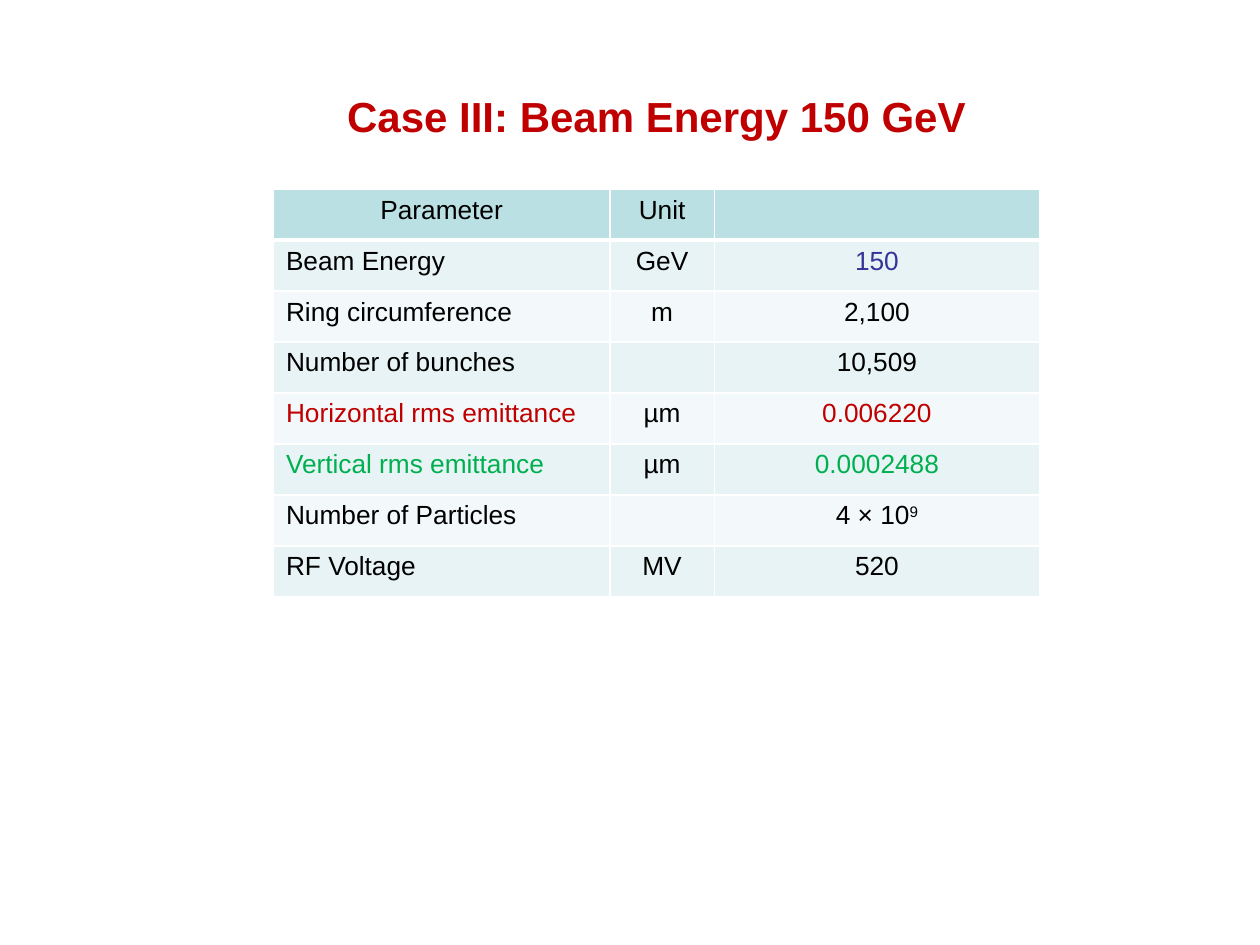
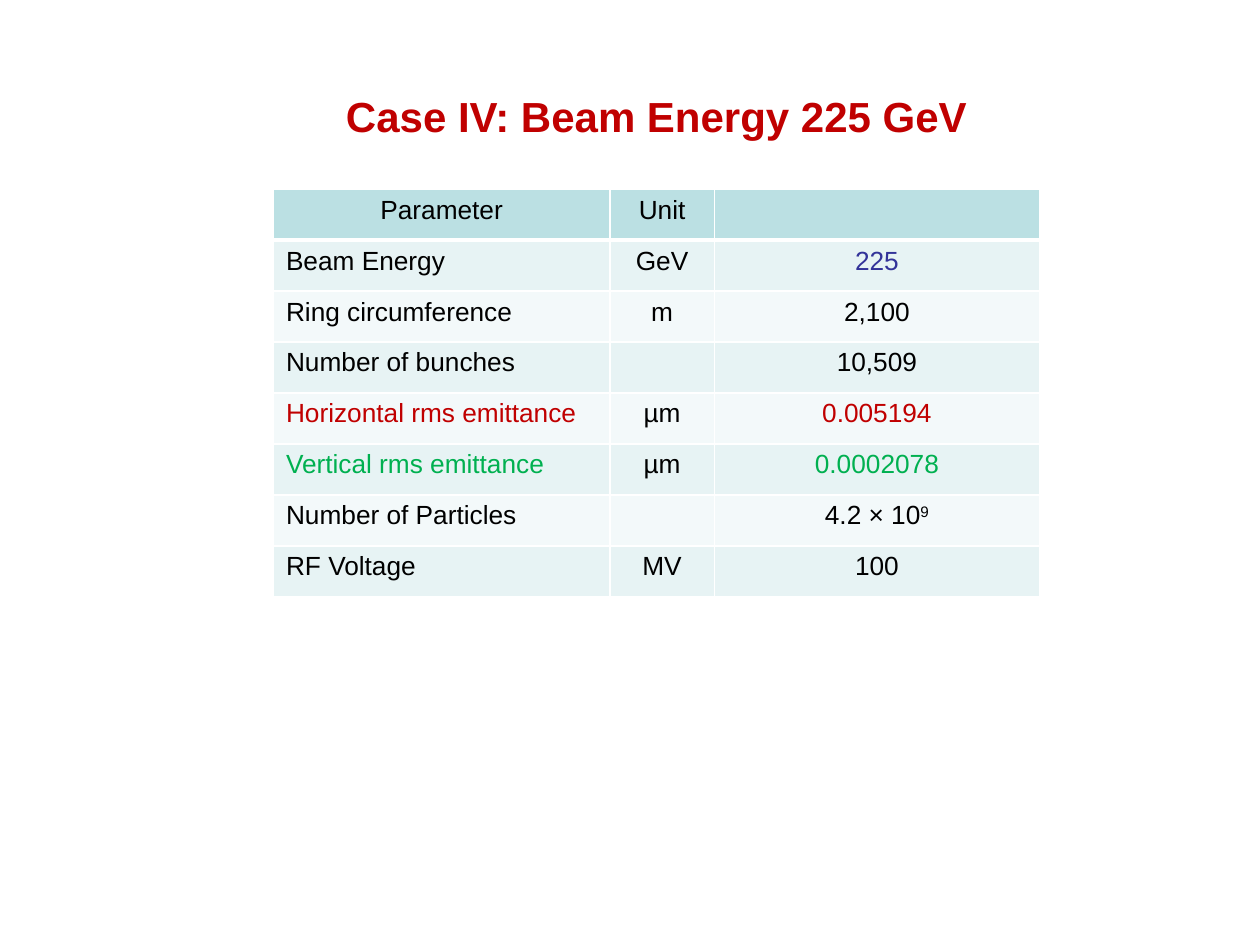
from lxml import etree
from pptx import Presentation
from pptx.dml.color import RGBColor as RGB
from pptx.enum.text import MSO_ANCHOR as Anchor, MSO_AUTO_SIZE as Fit, PP_ALIGN as Align
from pptx.oxml.ns import qn
from pptx.util import Inches, Pt

# Shared look
FONT = "Arial"
BLACK = RGB(0x00, 0x00, 0x00)
RED = RGB(0xC0, 0x00, 0x00)
GREEN = RGB(0x00, 0xB0, 0x50)
BLUE = RGB(0x33, 0x33, 0x99)
WHITE = RGB(0xFF, 0xFF, 0xFF)
HEAD = RGB(0xBB, 0xE0, 0xE3)
BANDS = [RGB(0xF3, 0xF9, 0xFA), RGB(0xE7, 0xF3, 0xF4)]
WIDTHS = [2.67, 0.83, 2.58]
HEIGHT = 3.24

# Each row: parameter, unit, label colour, value colour
ROWS = [
    ("Parameter", "Unit", BLACK, BLACK),
    ("Beam Energy", "GeV", BLACK, BLUE),
    ("Ring circumference", "m", BLACK, BLACK),
    ("Number of bunches", "", BLACK, BLACK),
    ("Horizontal rms emittance", "µm", RED, RED),
    ("Vertical rms emittance", "µm", GREEN, GREEN),
    ("Number of Particles", "", BLACK, BLACK),
    ("RF Voltage", "MV", BLACK, BLACK),
]

# Each case: title and value column; "^" starts a superscript
CASES = [
    ("Case III: Beam Energy 150 GeV",
     ["", "150", "2,100", "10,509", "0.006220", "0.0002488", "4 × 10^9", "520"]),
    ("Case IV: Beam Energy 225 GeV",
     ["", "225", "2,100", "10,509", "0.005194", "0.0002078", "4.2 × 10^9", "100"]),
]


def add_run(para, text, size, color, bold=False):
    run = para.add_run()
    run.text = text
    font = run.font
    font.name, font.size, font.bold = FONT, Pt(size), bold
    font.color.rgb = color
    return run


def add_edge(cell, side, width):
    line = etree.SubElement(cell._tc.get_or_add_tcPr(), qn("a:ln" + side), w=str(Pt(width)))
    fill = etree.SubElement(line, qn("a:solidFill"))
    etree.SubElement(fill, qn("a:srgbClr"), val=str(WHITE))


prs = Presentation()
prs.slide_width, prs.slide_height = Inches(10), Inches(7.5)

for name, values in CASES:
    slide = prs.slides.add_slide(prs.slide_layouts[5])

    # Title
    title = slide.shapes.title
    title.left, title.top = Inches(2.42), Inches(0.67)
    title.width, title.height = Inches(5.58), Inches(0.5)
    frame = title.text_frame
    frame.auto_size = Fit.NONE
    frame.vertical_anchor = Anchor.TOP
    para = frame.paragraphs[0]
    para.alignment = Align.CENTER
    add_run(para, name, 24, RED, True)

    # Parameter table
    table = slide.shapes.add_table(len(ROWS), len(WIDTHS), Inches(2.17), Inches(1.5),
                                   Inches(sum(WIDTHS)), Inches(HEIGHT)).table
    for col, width in zip(table.columns, WIDTHS):
        col.width = Inches(width)

    for r, ((label, unit, tint, shade), value) in enumerate(zip(ROWS, values)):
        table.rows[r].height = Inches(HEIGHT / len(ROWS))
        texts = zip([label, unit, value], [tint, BLACK, shade])
        for c, (text, color) in enumerate(texts):
            cell = table.cell(r, c)

            # White rules, thicker under the header
            for side in "LRTB":
                thick = (r, side) in [(0, "B"), (1, "T")]
                add_edge(cell, side, 3 if thick else 1)
            cell.fill.solid()
            cell.fill.fore_color.rgb = BANDS[r % 2] if r else HEAD

            # Cell text
            para = cell.text_frame.paragraphs[0]
            para.alignment = Align.LEFT if r and c == 0 else Align.CENTER
            para.font.size = Pt(15)
            base, _, power = text.partition("^")
            if base:
                add_run(para, base, 15, color)
            if power:
                run = add_run(para, power, 15, color)
                run.font._element.set("baseline", "30000")

prs.save("out.pptx")
